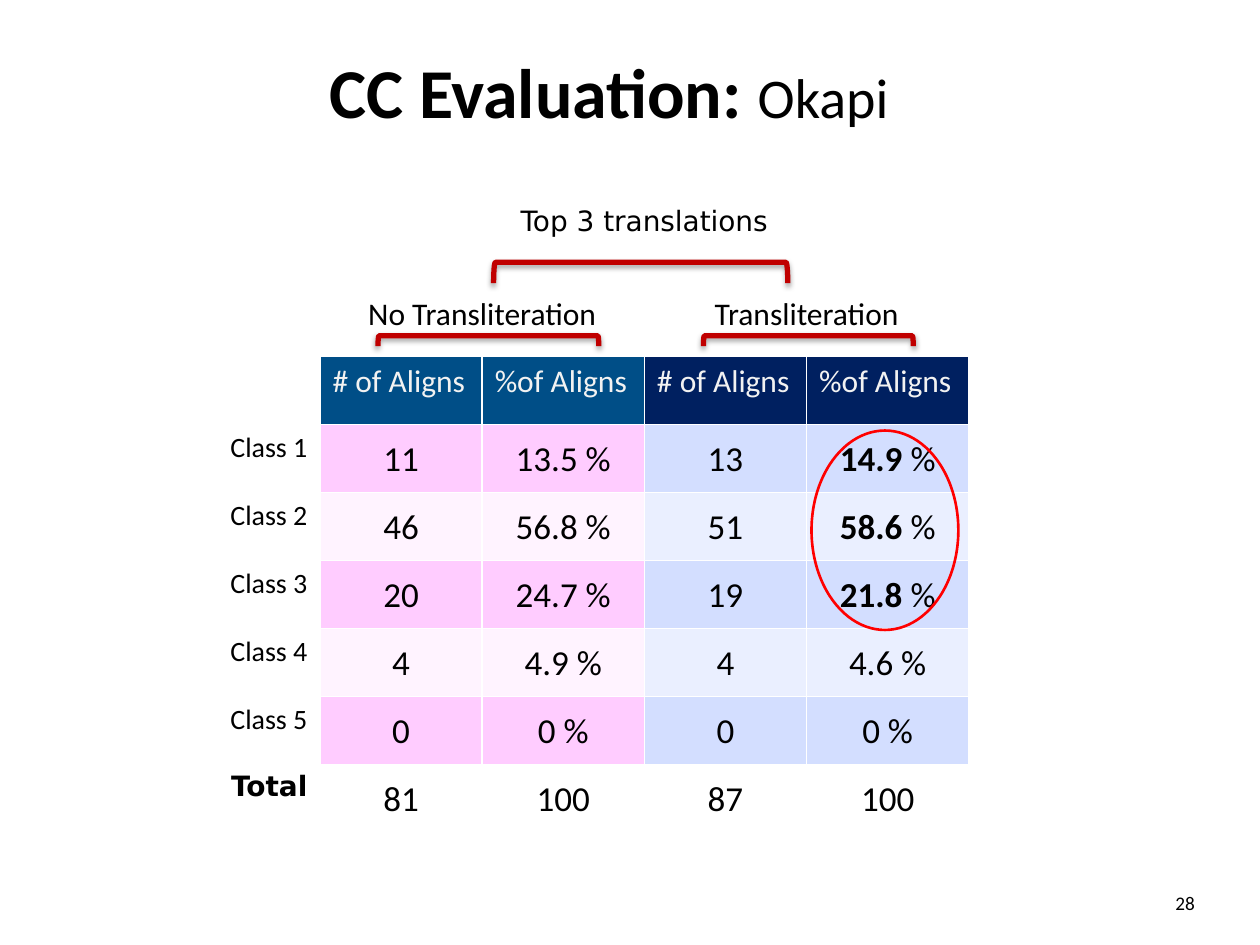
from lxml.etree import SubElement
from pptx import Presentation
from pptx.dml.color import RGBColor
from pptx.enum.shapes import MSO_SHAPE
from pptx.enum.text import MSO_ANCHOR, PP_ALIGN
from pptx.oxml import parse_xml
from pptx.oxml.ns import nsdecls, qn
from pptx.util import Cm, Pt

BLACK, WHITE = "000000", "FFFFFF"
CLASS_ROWS = [
    ["Class 1", "11", "13.5 %", "13", "14.9 %"],
    ["Class 2", "46", "56.8 %", "51", "58.6 %"],
    ["Class 3", "20", "24.7 %", "19", "21.8 %"],
    ["Class 4", "4", "4.9 %", "4", "4.6 %"],
    ["Class 5", "0", "0 %", "0", "0 %"],
    ["Total", "81", "100", "87", "100"],
]
FIRST_CLASS_ROW = 3
HEADER_FILLS = ("004E87", "002060")
BAND_FILLS = [("FFCCFF", "D3DEFF"), ("FFF3FF", "EAEFFF")]


def color(hex_value):
    return RGBColor.from_string(hex_value)


def format_run(run, size, font="Calibri", hex_value=BLACK, bold=False):
    run.font.size = Pt(size)
    run.font.name = font
    run.font.bold = bold
    run.font.color.rgb = color(hex_value)


def add_runs(paragraph, parts, align, size, **style):
    """Fill a paragraph from (text, own formatting) pairs."""
    paragraph.alignment = align
    for text, own_style in parts:
        run = paragraph.add_run()
        run.text = text
        format_run(run, **{"size": size, **style, **own_style})


def add_text(slide, left, top, width, height, parts, align, size,
             anchor=MSO_ANCHOR.TOP):
    box = slide.shapes.add_textbox(Cm(left), Cm(top), Cm(width), Cm(height))
    frame = box.text_frame
    frame.word_wrap = True
    frame.vertical_anchor = anchor
    add_runs(frame.paragraphs[0], parts, align, size)


def style_cell(cell, fill, bottom_width=1):
    """Give a cell white borders and a solid fill."""
    properties = cell._tc.get_or_add_tcPr()
    for side in ("L", "R", "T", "B"):
        width = bottom_width if side == "B" else 1
        line = SubElement(properties, qn(f"a:ln{side}"), w=str(Pt(width)))
        solid = SubElement(line, qn("a:solidFill"))
        SubElement(solid, qn("a:srgbClr"), val=WHITE)
    cell.fill.solid()
    cell.fill.fore_color.rgb = color(fill)


def write_cell(cell, parts, align, size, **style):
    add_runs(cell.text_frame.paragraphs[0], parts, align, size, **style)


def cell_fill(row, column):
    """Return the fill by column group and row band."""
    last_class_row = FIRST_CLASS_ROW + len(CLASS_ROWS) - 2
    if column == 0 or row < FIRST_CLASS_ROW - 1 or row > last_class_row:
        return WHITE
    group = (column - 1) // 2
    if row < FIRST_CLASS_ROW:
        return HEADER_FILLS[group]
    return BAND_FILLS[(row - FIRST_CLASS_ROW) % 2][group]


def write_headings(table):
    for row, first, last, text, size, font in [
        (0, 1, 4, "Top 3 translations", 16, "DejaVu Sans"),
        (1, 1, 2, "No Transliteration", 18, "Calibri"),
        (1, 3, 4, "Transliteration", 18, "Calibri"),
    ]:
        table.cell(row, first).merge(table.cell(row, last))
        write_cell(table.cell(row, first), [(text, {})], PP_ALIGN.CENTER, size, font=font)
    for column in range(1, 5):
        text = "# of Aligns" if column % 2 else "%of Aligns"
        write_cell(table.cell(2, column), [(text, {})], PP_ALIGN.LEFT, 18,
                   hex_value="F2F2F2")


def write_value(cell, text, bold):
    cell.vertical_anchor = MSO_ANCHOR.MIDDLE
    cell.margin_left = cell.margin_right = cell.margin_top = Cm(0.03)
    cell.margin_bottom = 0
    parts = [(text, {})]
    if bold:
        parts = [(text.removesuffix("%"), {"bold": True}), ("%", {})]
    write_cell(cell, parts, PP_ALIGN.CENTER, 20)


def add_evaluation_table(slide):
    row_count = FIRST_CLASS_ROW + len(CLASS_ROWS)
    table = slide.shapes.add_table(row_count, 5, Cm(3.18), Cm(4.02),
                                   Cm(16.35), Cm(12.8)).table
    table.first_row = table.horz_banding = False
    for column in table.columns:
        column.width = Cm(3.27)
    for index, row in enumerate(table.rows):
        row.height = Cm(1.8 if index == 0 else 1.37)
        for column, cell in enumerate(row.cells):
            style_cell(cell, cell_fill(index, column), 3 if index == 0 else 1)
    write_headings(table)
    for index, (label, *values) in enumerate(CLASS_ROWS):
        row = FIRST_CLASS_ROW + index
        total = label == "Total"
        write_cell(table.cell(row, 0), [(label, {})], PP_ALIGN.RIGHT, 16,
                   font="DejaVu Sans" if total else "Calibri", bold=total)
        for column, text in enumerate(values, start=1):
            write_value(table.cell(row, column), text, column == 4 and index < 3)


def add_outline(slide, kind, left, top, width, height, hex_value, line_width):
    shape = slide.shapes.add_shape(kind, Cm(left), Cm(top), Cm(width), Cm(height))
    shape.shadow.inherit = False
    shape.fill.background()
    shape.line.color.rgb = color(hex_value)
    shape.line.width = Pt(line_width)
    return shape


def add_bracket(slide, left, top, width, height):
    """Add a shadowed bracket that opens downwards over the given area."""
    offset = (width - height) / 2
    bracket = add_outline(slide, MSO_SHAPE.LEFT_BRACKET, left + offset, top - offset,
                          height, width, "C00000", 3)
    bracket.rotation = 90
    effects = bracket._element.spPr.find(qn("a:effectLst"))
    effects.append(parse_xml(
        f'<a:outerShdw {nsdecls("a")} blurRad="{Pt(3.1)}" dist="{Pt(1.8)}" '
        'dir="5400000" rotWithShape="0"><a:srgbClr val="000000">'
        '<a:alpha val="35000"/></a:srgbClr></a:outerShdw>'))


def main():
    presentation = Presentation()
    presentation.slide_width, presentation.slide_height = Cm(25.4), Cm(19.05)
    slide = presentation.slides.add_slide(presentation.slide_layouts[6])
    add_text(slide, 21.8, 17.78, 2.54, 0.84, [("28", {})], PP_ALIGN.RIGHT, 11,
             MSO_ANCHOR.MIDDLE)
    add_text(slide, 1.9, 0.85, 20.75, 1.96,
             [("CC Evaluation: ", {"bold": True}), ("Okapi", {"size": 32})],
             PP_ALIGN.CENTER, 40)
    add_evaluation_table(slide)
    add_bracket(slide, 7.62, 6.77, 4.45, 0.21)
    add_bracket(slide, 14.18, 6.77, 4.23, 0.21)
    add_bracket(slide, 9.95, 5.29, 5.93, 0.42)
    add_outline(slide, MSO_SHAPE.OVAL, 16.36, 8.68, 2.96, 4.02, "FF0000", 1.5)
    presentation.save("out.pptx")


if __name__ == "__main__":
    main()
